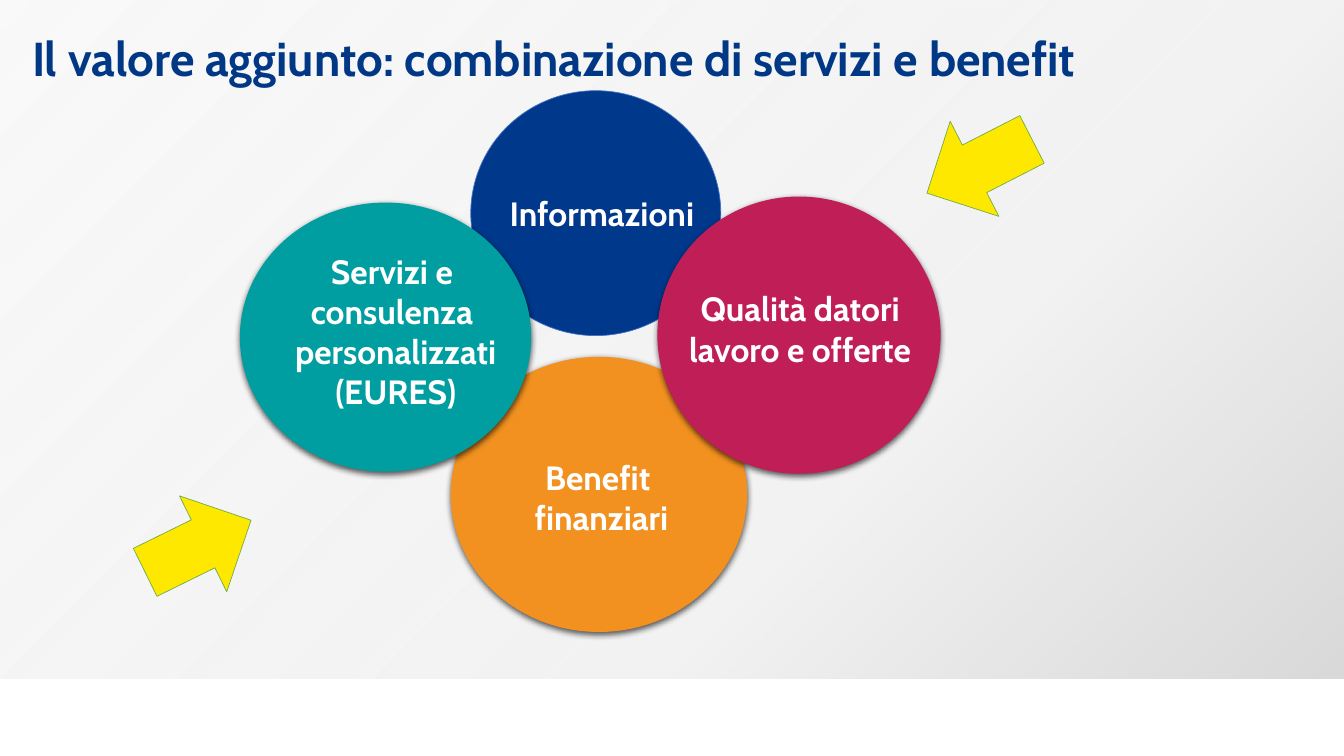
from typing import NamedTuple

from lxml.etree import SubElement
from pptx import Presentation
from pptx.dml.color import RGBColor
from pptx.enum.shapes import MSO_SHAPE
from pptx.enum.text import MSO_ANCHOR, PP_ALIGN
from pptx.oxml import parse_xml
from pptx.oxml.ns import nsdecls, qn
from pptx.util import Inches, Pt

SLIDE_W, SLIDE_H = Inches(13.33), Inches(7.5)

COLORS = {
    "title": "003886",
    "blue": "00388C",
    "orange": "F29120",
    "teal": "009EA0",
    "magenta": "C01E56",
    "yellow": "FFE800",
    "white": "FFFFFF",
    "disc_edge": "4472C4",
    "arrow_edge": "70AD47",
    "shadow": "000000",
    "grey": "D9D9D9",
    "light": "F2F2F2",
}


class Box(NamedTuple):
    """Left, top, width and height in percent of the slide's size."""
    left: float
    top: float
    width: float
    height: float

    def emu(self) -> tuple[int, int, int, int]:
        return (int(SLIDE_W * self.left / 100), int(SLIDE_H * self.top / 100),
                int(SLIDE_W * self.width / 100), int(SLIDE_H * self.height / 100))


class Disc(NamedTuple):
    box: Box
    color: str
    label: str
    label_box: Box
    anchor: MSO_ANCHOR = MSO_ANCHOR.TOP
    edge: str | None = None


class Arrow(NamedTuple):
    box: Box
    rotation: float


BACKDROP = Box(0, 0, 100, 89.73)
TITLE = "Il valore aggiunto: combinazione di servizi e benefit"
TITLE_BOX = Box(1.65, 3.2, 96.1, 8.93)

DISCS = [
    Disc(Box(35.03, 12, 18.6, 32.4), "blue", "Informazioni",
         Box(35.03, 15, 19.5, 26.27), MSO_ANCHOR.MIDDLE, "disc_edge"),
    Disc(Box(33.53, 47.2, 22.06, 36.4), "orange", "Benefit \nfinanziari",
         Box(34.36, 59.73, 20.78, 12.13)),
    Disc(Box(17.85, 26.8, 21.68, 35.6), "teal",
         "Servizi e \nconsulenza \npersonalizzati\n(EURES)",
         Box(13.05, 30.53, 32.78, 26.53), MSO_ANCHOR.MIDDLE),
    Disc(Box(48.91, 26, 21.08, 36.67), "magenta", "Qualità datori lavoro e offerte",
         Box(49.14, 37.47, 20.78, 12.13)),
]

ARROWS = [
    Arrow(Box(10.35, 65.2, 8.78, 14.13), 333.8),
    Arrow(Box(68.49, 14.93, 8.78, 14.13), 152.9),
]


def rgb(name: str) -> RGBColor:
    return RGBColor.from_string(COLORS[name])


def add_filled(s, kind: MSO_SHAPE, box: Box, color: str, edge: str | None = None):
    sp = s.shapes.add_shape(kind, *box.emu())
    sp.shadow.inherit = False
    sp.fill.solid()
    sp.fill.fore_color.rgb = rgb(color)
    if edge:
        sp.line.color.rgb = rgb(edge)
        sp.line.width = Pt(0.5)
    else:
        sp.line.fill.background()
    return sp


def add_soft_shadow(sp) -> None:
    effects = sp.element.spPr.find(qn("a:effectLst"))
    shadow = SubElement(effects, qn("a:outerShdw"), blurRad=str(Pt(4.5)),
                        dist=str(Pt(1.5)), dir="5400000", rotWithShape="0")
    color = SubElement(shadow, qn("a:srgbClr"), val=COLORS["shadow"])
    SubElement(color, qn("a:alpha"), val="63000")


def add_backdrop(s) -> None:
    """Grey gradient that spreads from the bottom right corner."""
    sp = add_filled(s, MSO_SHAPE.RECTANGLE, BACKDROP, "light")
    gradient = parse_xml(
        f'<a:gradFill {nsdecls("a")} rotWithShape="1"><a:gsLst>'
        f'<a:gs pos="1000"><a:srgbClr val="{COLORS["grey"]}"/></a:gs>'
        f'<a:gs pos="34000"><a:srgbClr val="{COLORS["light"]}"/></a:gs>'
        f'<a:gs pos="100000"><a:srgbClr val="{COLORS["light"]}">'
        '<a:alpha val="44000"/></a:srgbClr></a:gs></a:gsLst>'
        '<a:path path="circle"><a:fillToRect l="100000" t="100000"/></a:path>'
        '</a:gradFill>')
    spPr = sp.element.spPr
    spPr.replace(spPr.find(qn("a:solidFill")), gradient)


def add_text(s, text: str, box: Box, size: float, color: str,
             align: PP_ALIGN, anchor: MSO_ANCHOR = MSO_ANCHOR.TOP) -> None:
    tf = s.shapes.add_textbox(*box.emu()).text_frame
    tf.word_wrap = True
    tf.vertical_anchor = anchor
    tf.text = text
    for p in tf.paragraphs:
        p.alignment = align
        for r in p.runs:
            r.font.name = "Cabin"
            r.font.size = Pt(size)
            r.font.bold = True
            r.font.color.rgb = rgb(color)


def add_disc(s, disc: Disc) -> None:
    sp = add_filled(s, MSO_SHAPE.OVAL, disc.box, disc.color, disc.edge)
    if not disc.edge:
        add_soft_shadow(sp)
    add_text(s, disc.label, disc.label_box, 24, "white", PP_ALIGN.CENTER, disc.anchor)


def main() -> None:
    prs = Presentation()
    prs.slide_width, prs.slide_height = SLIDE_W, SLIDE_H
    s = prs.slides.add_slide(prs.slide_layouts[6])
    add_backdrop(s)
    for disc in DISCS:
        add_disc(s, disc)
    for arrow in ARROWS:
        sp = add_filled(s, MSO_SHAPE.RIGHT_ARROW, arrow.box, "yellow", "arrow_edge")
        sp.rotation = arrow.rotation
    add_text(s, TITLE, TITLE_BOX, 34, "title", PP_ALIGN.LEFT)
    prs.save("out.pptx")


if __name__ == "__main__":
    main()
